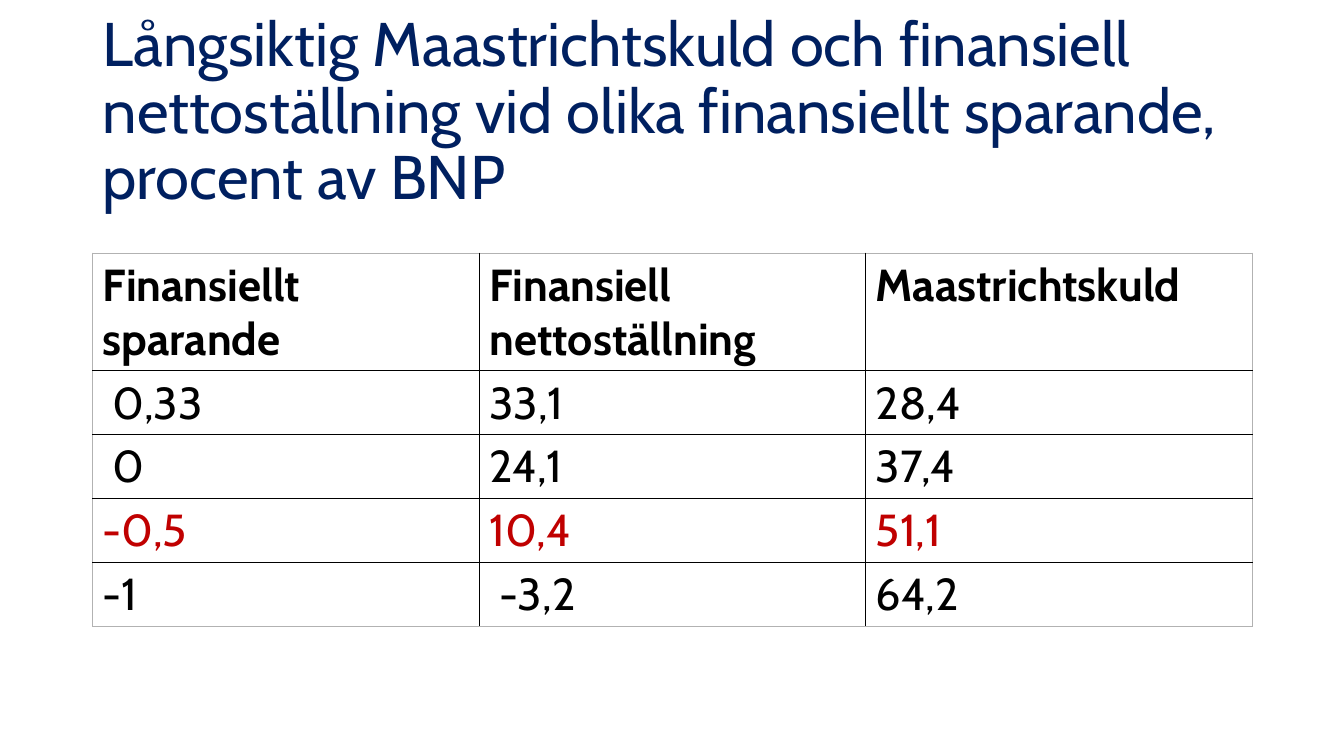
"""Build a slide with a table of long-term debt at different levels of net lending."""
import lxml.etree
import pptx
import pptx.dml.color
import pptx.enum.text
import pptx.oxml.ns
import pptx.util

TITLE = ("Långsiktig Maastrichtskuld och finansiell nettoställning "
         "vid olika finansiellt sparande, procent av BNP")
ROWS = [
    ("Finansiellt sparande", "Finansiell nettoställning", "Maastrichtskuld"),
    (" 0,33", "33,1", "28,4"),
    (" 0", "24,1", "37,4"),
    ("-0,5", "10,4", "51,1"),
    ("-1", " -3,2", "64,2"),
]
HIGHLIGHTED_ROW = 3

THEME = {
    "font": "Cabin",
    "title_size": 44,
    "table_size": 32,
    "title": "002060",
    "text": "000000",
    "highlight": "C00000",
    "grid": "000000",
    "frame": "B2B2B2",
    "grid_width": 1,
    "frame_width": 0.75,
}

LEFT, WIDTH = 0.92, 11.5
TITLE_TOP, TITLE_HEIGHT = 0.4, 1.45
TABLE_TOP, HEADER_HEIGHT, ROW_HEIGHT = 2.51, 1.12, 0.61


def add_text(paragraph, text, size, color, bold=False):
    run = paragraph.add_run()
    run.text = text
    run.font.name = THEME["font"]
    run.font.size = pptx.util.Pt(size)
    run.font.bold = bold
    run.font.color.rgb = pptx.dml.color.RGBColor.from_string(color)


def set_borders(cell, outer_sides):
    properties = cell._tc.get_or_add_tcPr()
    for position, (side, outer) in enumerate(outer_sides.items()):
        kind = "frame" if outer else "grid"
        width = pptx.util.Pt(THEME[kind + "_width"])
        line = lxml.etree.Element(pptx.oxml.ns.qn("a:ln" + side), w=str(int(width)))
        fill = lxml.etree.SubElement(line, pptx.oxml.ns.qn("a:solidFill"))
        lxml.etree.SubElement(fill, pptx.oxml.ns.qn("a:srgbClr"), val=THEME[kind])
        properties.insert(position, line)


def add_title(slide):
    box = slide.shapes.add_textbox(*map(
        pptx.util.Inches, (LEFT, TITLE_TOP, WIDTH, TITLE_HEIGHT)))
    frame = box.text_frame
    frame.word_wrap = True
    frame.vertical_anchor = pptx.enum.text.MSO_ANCHOR.MIDDLE
    paragraph = frame.paragraphs[0]
    paragraph.line_spacing = 0.9
    add_text(paragraph, TITLE, THEME["title_size"], THEME["title"])


def add_debt_table(slide):
    heights = [HEADER_HEIGHT] + [ROW_HEIGHT] * (len(ROWS) - 1)
    last_row, last_column = len(ROWS) - 1, len(ROWS[0]) - 1
    table = slide.shapes.add_table(
        len(ROWS), len(ROWS[0]),
        *map(pptx.util.Inches, (LEFT, TABLE_TOP, WIDTH, sum(heights)))).table
    table.first_row = False
    table.horz_banding = False
    for row_index, values in enumerate(ROWS):
        table.rows[row_index].height = pptx.util.Inches(heights[row_index])
        color = THEME["highlight" if row_index == HIGHLIGHTED_ROW else "text"]
        for column_index, value in enumerate(values):
            cell = table.cell(row_index, column_index)
            cell.fill.background()
            add_text(cell.text_frame.paragraphs[0], value,
                     THEME["table_size"], color, bold=row_index == 0)
            set_borders(cell, {
                "L": column_index == 0,
                "R": column_index == last_column,
                "T": row_index == 0,
                "B": row_index == last_row,
            })


def main():
    presentation = pptx.Presentation()
    presentation.slide_width = pptx.util.Inches(13.33)
    presentation.slide_height = pptx.util.Inches(7.5)
    slide = presentation.slides.add_slide(presentation.slide_layouts[6])
    add_title(slide)
    add_debt_table(slide)
    presentation.save("out.pptx")


if __name__ == "__main__":
    main()
